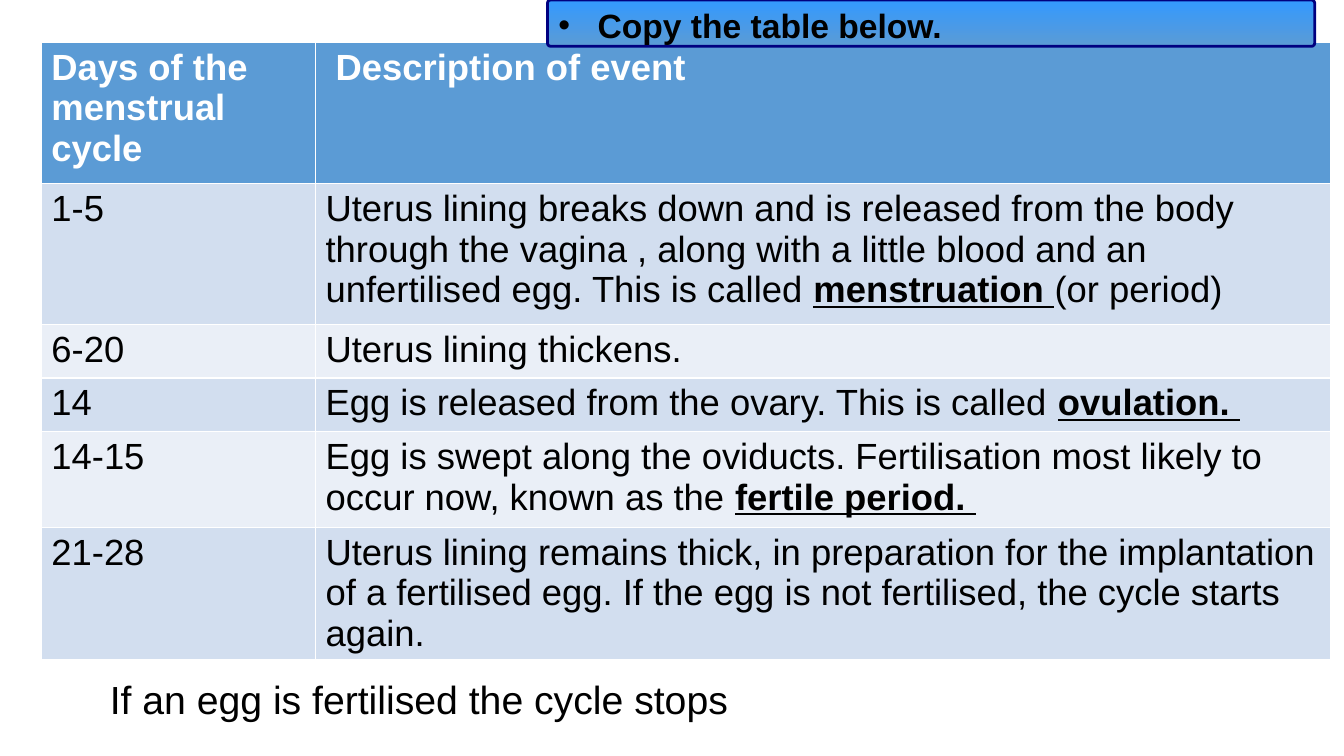
from lxml import etree
from pptx import Presentation
from pptx.dml.color import RGBColor
from pptx.enum.shapes import MSO_SHAPE
from pptx.enum.text import MSO_ANCHOR, MSO_AUTO_SIZE, PP_ALIGN
from pptx.oxml.ns import qn
from pptx.util import Inches, Pt

FONT = "Arial"
COLORS = {
    "header": "5B9BD5",
    "odd_row": "D2DEEF",
    "even_row": "EAEFF7",
    "banner_top": "3399FF",
    "banner_line": "000080",
    "black": "000000",
    "white": "FFFFFF",
}

# Each description is a list of (text, is key term) runs.
HEADER = ("Days of the menstrual cycle", [(" Description of event", False)])
EVENTS = [
    ("1-5", [
        ("Uterus lining breaks down and is released from the body through "
         "the vagina , along with a little blood and an unfertilised egg. "
         "This is called ", False),
        ("menstruation ", True),
        ("(or period)", False),
    ]),
    ("6-20", [("Uterus lining thickens.", False)]),
    ("14", [
        ("Egg is released from the ovary. This is called ", False),
        ("ovulation. ", True),
    ]),
    ("14-15", [
        ("Egg is swept along the oviducts. Fertilisation most likely to "
         "occur now, known as the ", False),
        ("fertile period. ", True),
    ]),
    ("21-28", [
        ("Uterus lining remains thick, in preparation for the implantation "
         "of a fertilised egg. If the egg is not fertilised, the cycle "
         "starts again.", False),
    ]),
]
COLUMN_WIDTHS = [2.72, 10.07]
ROW_HEIGHTS = [1.4, 1.4, 0.53, 0.53, 0.95, 0.97]
INSTRUCTION = "Copy the table below."
CLOSING = "If an egg is fertilised the cycle stops"


def color(name):
    return RGBColor.from_string(COLORS[name])


def add_run(paragraph, text, size, color_name="black", bold=False, underline=False):
    run = paragraph.add_run()
    run.text = text
    run.font.name = FONT
    run.font.size = Pt(size)
    run.font.bold = bold
    run.font.underline = underline
    run.font.color.rgb = color(color_name)


def add_cycle_table(slide):
    rows = [HEADER] + EVENTS
    table = slide.shapes.add_table(
        len(rows), len(COLUMN_WIDTHS), Inches(0.41), Inches(0.42),
        Inches(sum(COLUMN_WIDTHS)), Inches(sum(ROW_HEIGHTS))).table
    for column, width in zip(table.columns, COLUMN_WIDTHS):
        column.width = Inches(width)
    for index, (days, description) in enumerate(rows):
        table.rows[index].height = Inches(ROW_HEIGHTS[index])
        is_header = index == 0
        fill_name = "header" if is_header else ("even_row", "odd_row")[index % 2]
        text_color = "white" if is_header else "black"
        for cell, runs in zip(table.rows[index].cells, ([(days, False)], description)):
            cell.fill.solid()
            cell.fill.fore_color.rgb = color(fill_name)
            for text, is_term in runs:
                add_run(cell.text_frame.paragraphs[0], text, 26, text_color,
                        bold=is_header or is_term, underline=is_term)


def add_closing_line(slide):
    text_box = slide.shapes.add_textbox(
        Inches(0.99), Inches(6.65), Inches(9.52), Inches(0.57))
    frame = text_box.text_frame
    frame.word_wrap = True
    frame.auto_size = MSO_AUTO_SIZE.SHAPE_TO_FIT_TEXT
    add_run(frame.paragraphs[0], CLOSING, 28)


def add_bullet(paragraph, indent):
    properties = paragraph._p.get_or_add_pPr()
    properties.set("marL", str(Inches(indent)))
    properties.set("indent", str(-Inches(indent)))
    etree.SubElement(properties, qn("a:buFont"), typeface=FONT)
    etree.SubElement(properties, qn("a:buChar"), char="•")


def add_instruction_banner(slide):
    banner = slide.shapes.add_shape(
        MSO_SHAPE.ROUNDED_RECTANGLE,
        Inches(5.43), Inches(0), Inches(7.61), Inches(0.46))
    banner.adjustments[0] = 0.07
    banner.shadow.inherit = False
    banner.fill.gradient()
    banner.fill.gradient_angle = 270
    for stop, name in zip(banner.fill.gradient_stops, ("banner_top", "header")):
        stop.color.rgb = color(name)
    banner.line.color.rgb = color("banner_line")
    banner.line.width = Pt(2)
    frame = banner.text_frame
    frame.word_wrap = True
    frame.vertical_anchor = MSO_ANCHOR.BOTTOM
    frame.margin_top = frame.margin_bottom = 0
    paragraph = frame.paragraphs[0]
    paragraph.alignment = PP_ALIGN.LEFT
    add_bullet(paragraph, 0.39)
    add_run(paragraph, INSTRUCTION, 24, bold=True)


def main():
    presentation = Presentation()
    presentation.slide_width = Inches(13.33)
    presentation.slide_height = Inches(7.5)
    slide = presentation.slides.add_slide(presentation.slide_layouts[6])
    add_cycle_table(slide)
    add_closing_line(slide)
    add_instruction_banner(slide)
    presentation.save("out.pptx")


if __name__ == "__main__":
    main()
